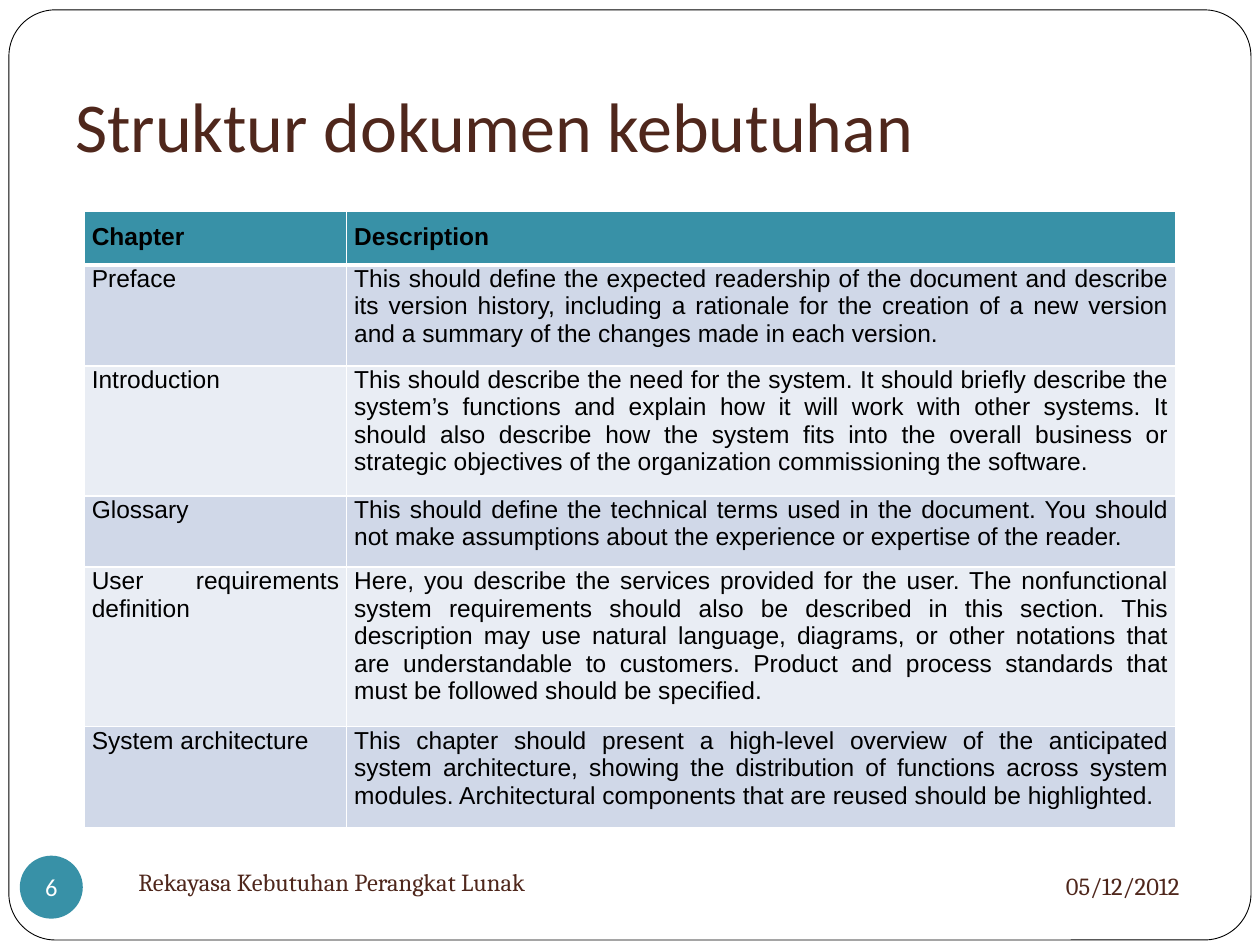
from dataclasses import dataclass

from lxml import etree
from pptx import Presentation
from pptx.dml.color import RGBColor
from pptx.enum.shapes import MSO_SHAPE
from pptx.enum.text import MSO_ANCHOR, PP_ALIGN
from pptx.oxml.ns import qn
from pptx.util import Cm, Pt

ROUNDED, OVAL = MSO_SHAPE.ROUNDED_RECTANGLE, MSO_SHAPE.OVAL
MIDDLE, BOTTOM = MSO_ANCHOR.MIDDLE, MSO_ANCHOR.BOTTOM
LEFT, CENTER, RIGHT, JUSTIFY = PP_ALIGN.LEFT, PP_ALIGN.CENTER, PP_ALIGN.RIGHT, PP_ALIGN.JUSTIFY
WHITE, BLACK, TEAL, BROWN = "FFFFFF", "000000", "3891A7", "4F271C"
BANDS = ("E9EDF4", "D0D8E8")
ROW_HEIGHT = Cm(1.04)

ROWS = [
    ("Chapter", "Description"),
    ("Preface",
     "This should define the expected readership of the document and describe its version "
     "history, including a rationale for the creation of a new version and a summary of the "
     "changes made in each version."),
    ("Introduction",
     "This should describe the need for the system. It should briefly describe the system’s "
     "functions and explain how it will work with other systems. It should also describe how "
     "the system fits into the overall business or strategic objectives of the organization "
     "commissioning the software."),
    ("Glossary",
     "This should define the technical terms used in the document. You should not make "
     "assumptions about the experience or expertise of the reader."),
    ("User requirements definition",
     "Here, you describe the services provided for the user. The nonfunctional system "
     "requirements should also be described in this section. This description may use natural "
     "language, diagrams, or other notations that are understandable to customers. Product and "
     "process standards that must be followed should be specified."),
    ("System architecture",
     "This chapter should present a high-level overview of the anticipated system "
     "architecture, showing the distribution of functions across system modules. "
     "Architectural components that are reused should be highlighted."),
]


@dataclass
class Label:
    text: str
    box: tuple
    font: str
    size: int = 14
    align: PP_ALIGN = LEFT
    anchor: MSO_ANCHOR = MIDDLE
    bottom: float = 0.13


LABELS = [
    Label("Struktur dokumen kebutuhan", (1.27, 0.58, 22.86, 3.02), "Calibri", 40,
          anchor=BOTTOM, bottom=0.25),
    Label("Rekayasa Kebutuhan Perangkat Lunak", (2.54, 17.15, 11, 1.27), "Cambria"),
    Label("05/12/2012", (17.15, 17.2, 6.88, 1.32), "Cambria", align=RIGHT),
]


def rgb(value: str) -> RGBColor:
    return RGBColor.from_string(value)


def write(tf, text: str, font: str, size: int, color: str, align, bold: bool = False) -> None:
    p = tf.paragraphs[0]
    p.text = text
    p.alignment = align
    p.font.name, p.font.size, p.font.bold = font, Pt(size), bold
    p.font.color.rgb = rgb(color)


def add_shape(s, kind, box: tuple, fill: str):
    sp = s.shapes.add_shape(kind, *map(Cm, box))
    sp.shadow.inherit = False
    sp.fill.solid()
    sp.fill.fore_color.rgb = rgb(fill)
    sp.line.fill.background()
    return sp


def add_label(s, label: Label) -> None:
    tf = s.shapes.add_textbox(*map(Cm, label.box)).text_frame
    tf.word_wrap = True
    tf.vertical_anchor = label.anchor
    tf.margin_bottom = Cm(label.bottom)
    write(tf, label.text, label.font, label.size, BROWN, label.align)


def set_borders(cell, top: int, bottom: int) -> None:
    tc_pr = cell._tc.get_or_add_tcPr()
    for i, (side, width) in enumerate(zip("LRTB", (1, 1, top, bottom))):
        ln = etree.Element(qn(f"a:ln{side}"), w=str(Pt(width)))
        fill = etree.SubElement(ln, qn("a:solidFill"))
        etree.SubElement(fill, qn("a:srgbClr"), val=WHITE)
        tc_pr.insert(i, ln)


def add_chapter_table(s) -> None:
    frame = s.shapes.add_table(len(ROWS), 2, Cm(1.7), Cm(4.25), Cm(22.01), Cm(12.45))
    table = frame.table
    for column, width in zip(table.columns, (5.29, 16.72)):
        column.width = Cm(width)
    for r, texts in enumerate(ROWS):
        header = r == 0
        table.rows[r].height = ROW_HEIGHT
        for c, text in enumerate(texts):
            cell = table.cell(r, c)
            cell.fill.solid()
            cell.fill.fore_color.rgb = rgb(TEAL if header else BANDS[r % 2])
            cell.margin_left = cell.margin_right = Cm(0.15)
            cell.margin_top = Cm(0.25 if header else 0)
            cell.margin_bottom = Cm(0.25)
            set_borders(cell, 3 if r == 1 else 1, 3 if header else 1)
            write(cell.text_frame, text, "Arial", 14, BLACK, JUSTIFY, header)
    frame.height = Cm(12.45)


def add_page_number(s) -> None:
    tf = add_shape(s, OVAL, (0.4, 17.25, 1.27, 1.27), TEAL).text_frame
    tf.margin_left = tf.margin_right = tf.margin_top = tf.margin_bottom = 0
    tf.word_wrap = False
    tf.vertical_anchor = MIDDLE
    write(tf, "6", "Calibri", 14, WHITE, CENTER)


def main() -> None:
    """Build the slide on the structure of a requirements document."""
    prs = Presentation()
    prs.slide_width, prs.slide_height = Cm(25.4), Cm(19.05)
    s = prs.slides.add_slide(prs.slide_layouts[6])
    border = add_shape(s, ROUNDED, (0.18, 0.2, 25.04, 18.75), WHITE)
    border.adjustments[0] = 0.05
    border.line.color.rgb = rgb(BLACK)
    border.line.width = Pt(0.5)
    title, *footers = LABELS
    add_label(s, title)
    add_chapter_table(s)
    add_page_number(s)
    for footer in footers:
        add_label(s, footer)
    prs.save("out.pptx")


if __name__ == "__main__":
    main()
